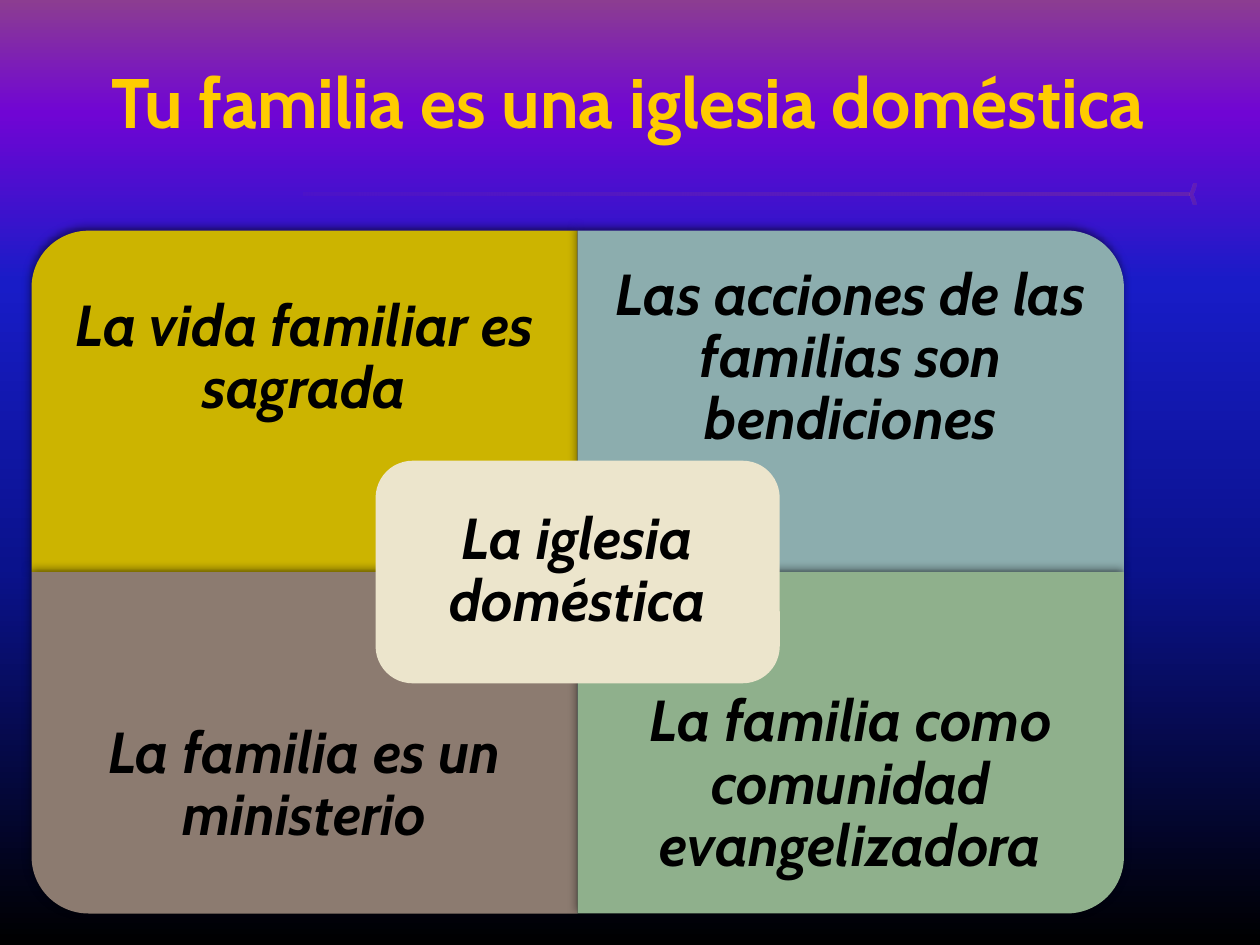
from dataclasses import dataclass

from lxml.etree import SubElement
from pptx import Presentation
from pptx.dml.color import RGBColor
from pptx.enum.shapes import MSO_SHAPE as Shape
from pptx.enum.text import MSO_ANCHOR as Anchor, PP_ALIGN as Align
from pptx.oxml.ns import qn
from pptx.util import Emu, Inches, Pt


@dataclass(frozen=True)
class Theme:
    font: str = "Cabin"
    title_size: float = 40
    body_size: float = 33
    title: str = "FFCC00"
    ink: str = "000000"
    rule: str = "D16349"
    center: str = "ECE5CC"
    sky: tuple = ((0, "8C3D91", 100), (12, "7005D4", 100), (30, "181CC7", 100),
                  (60, "0A128C", 100), (100, "000000", 100))


THEME = Theme()

# Text, fill and rotation of each quadrant, row by row
QUADRANTS = (
    ("La vida familiar es sagrada", "CCB400", 270),
    ("Las acciones de las familias son bendiciones", "8CADAE", 0),
    ("La familia es un ministerio", "8C7B70", 180),
    ("La familia como comunidad evangelizadora", "8FB08C", 90),
)


def add_color(parent, color, opacity):
    element = SubElement(parent, qn("a:srgbClr"), val=color)
    if opacity < 100:
        SubElement(element, qn("a:alpha"), val=str(opacity * 1000))


def fill_gradient(fill, properties, stops, angle):
    fill.gradient()
    gradient = properties.find(".//" + qn("a:gradFill"))
    for child in list(gradient):
        gradient.remove(child)
    stop_list = SubElement(gradient, qn("a:gsLst"))
    for position, color, opacity in stops:
        stop = SubElement(stop_list, qn("a:gs"), pos=str(position * 1000))
        add_color(stop, color, opacity)
    SubElement(gradient, qn("a:lin"), ang=str(angle * 60000), scaled="0")


def add_block(slide, kind, box, color=None):
    block = slide.shapes.add_shape(kind, *map(Emu, map(int, box)))
    block.shadow.inherit = False
    block.line.fill.background()
    if color:
        block.fill.solid()
        block.fill.fore_color.rgb = RGBColor.from_string(color)
    return block


def add_soft_shadow(block):
    effects = block._element.spPr.find(qn("a:effectLst"))
    shadow = SubElement(effects, qn("a:outerShdw"), blurRad=str(Pt(5)),
                        dist=str(Pt(2)), dir=str(245 * 60000), rotWithShape="0")
    add_color(shadow, THEME.ink, 50)


def write(frame, text, size, color, inset, italic=False):
    frame.word_wrap = True
    frame.vertical_anchor = Anchor.MIDDLE
    frame.margin_left = frame.margin_right = inset
    frame.margin_top = frame.margin_bottom = inset
    frame.text = text
    paragraph = frame.paragraphs[0]
    paragraph.alignment = Align.CENTER
    if italic:
        paragraph.line_spacing = 0.9
    font = paragraph.font
    font.name, font.size = THEME.font, Pt(size)
    font.bold, font.italic = True, italic
    font.color.rgb = RGBColor.from_string(color)


def add_title(slide, box, text):
    title = slide.shapes.title
    title.left, title.top, title.width, title.height = box
    write(title.text_frame, text, THEME.title_size, THEME.title, Inches(0.05))


def add_rule(slide, box):
    """Fading line that ends in a small chevron at the right."""
    left, top, width, height = box
    tip, thickness = Inches(0.06), Inches(0.02)
    chevron = add_block(slide, Shape.CHEVRON,
                        (left + width - tip, top, tip, height))
    chevron._element.spPr.find(qn("a:xfrm")).set("flipH", "1")
    line = add_block(slide, Shape.RECTANGLE,
                     (left, top + (height - thickness) / 2, width - tip, thickness))
    for part, end_opacity in ((chevron, 15), (line, 4)):
        stops = ((0, THEME.rule, 20), (100, THEME.rule, end_opacity))
        fill_gradient(part.fill, part._element.spPr, stops, 180)


def add_matrix(slide, box, quadrants, center_text):
    left, top, width, height = box
    column, row = width / 2, height / 2
    label_height = row * 0.75

    # Four quadrants, rounded at the outer corner, labels along the outer edge
    for index, (text, color, rotation) in enumerate(quadrants):
        r, c = divmod(index, 2)
        x, y = left + c * column, top + r * row
        w, h = (row, column) if rotation % 180 else (column, row)
        quadrant = add_block(slide, Shape.ROUND_1_RECTANGLE,
                             (x + (column - w) / 2, y + (row - h) / 2, w, h), color)
        quadrant.rotation = rotation
        add_soft_shadow(quadrant)
        label_top = y + r * (row - label_height)
        label = slide.shapes.add_textbox(
            *map(Emu, map(int, (x, label_top, column, label_height))))
        write(label.text_frame, text, THEME.body_size, THEME.ink,
              Inches(0.26), italic=True)

    # Central idea
    w, h = width * 0.37, height * 0.326
    center = add_block(slide, Shape.ROUNDED_RECTANGLE,
                       (left + (width - w) / 2, top + (height - h) / 2, w, h),
                       THEME.center)
    write(center.text_frame, center_text, THEME.body_size, THEME.ink,
          Inches(0.14), italic=True)


def main():
    deck = Presentation()
    deck.slide_width, deck.slide_height = Inches(10), Inches(7.5)
    slide = deck.slides.add_slide(deck.slide_layouts[5])
    background = slide.background.fill
    fill_gradient(background, slide._element, THEME.sky, 90)

    add_rule(slide, [Inches(n) for n in (2.41, 1.46, 7.09, 0.16)])
    add_title(slide, [Inches(n) for n in (-0.03, 0.17, 10.03, 1.25)],
              "Tu familia es una iglesia doméstica")
    add_matrix(slide, [Inches(n) for n in (0.25, 1.83, 8.67, 5.42)],
               QUADRANTS, "La iglesia doméstica")
    deck.save("out.pptx")


if __name__ == "__main__":
    main()
